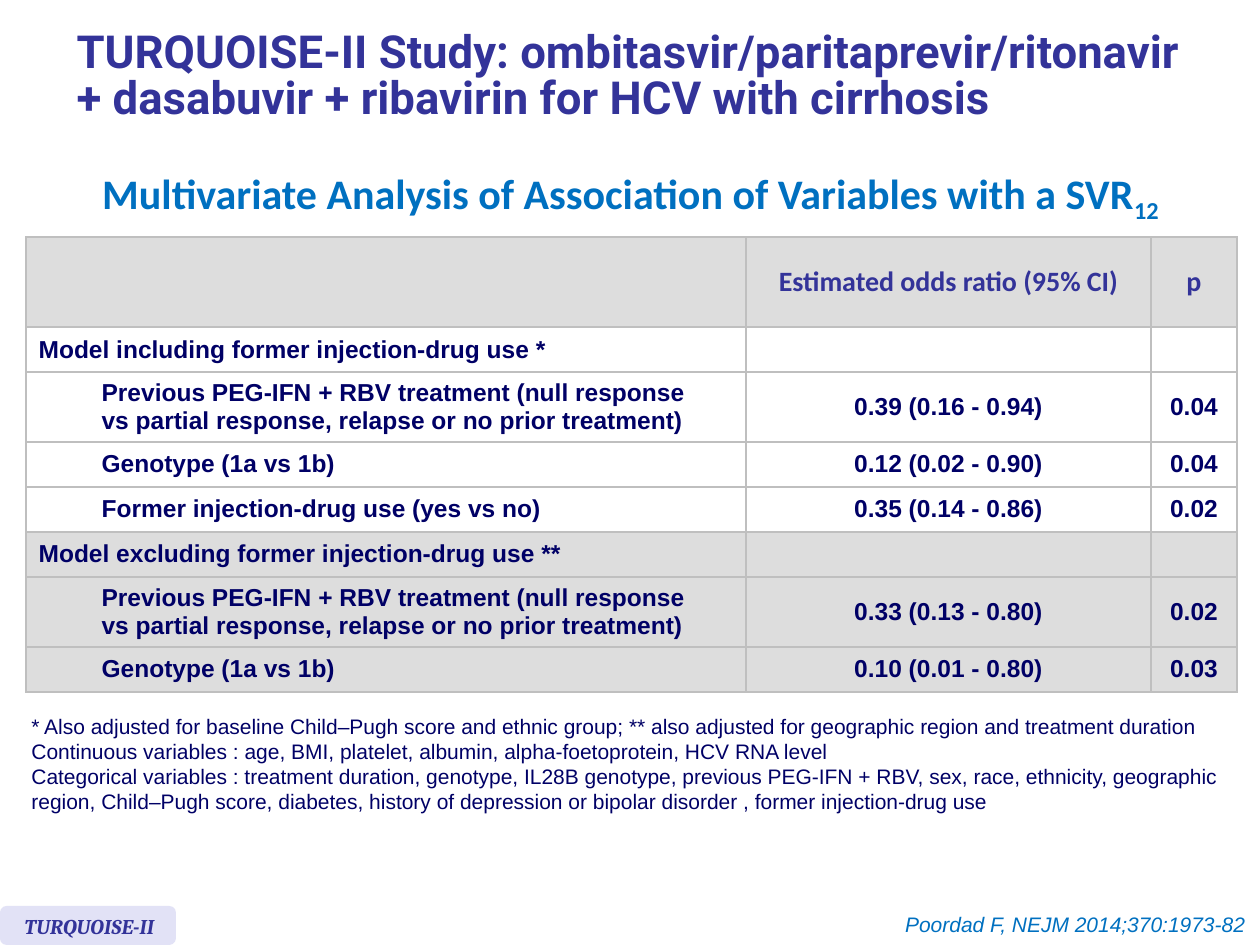
from lxml import etree
from pptx import Presentation
from pptx.dml.color import RGBColor
from pptx.enum.shapes import MSO_SHAPE
from pptx.enum.text import MSO_ANCHOR, PP_ALIGN
from pptx.oxml.ns import qn
from pptx.util import Emu, Pt

LEFT, MID, RIGHT = PP_ALIGN.LEFT, PP_ALIGN.CENTER, PP_ALIGN.RIGHT
MIDDLE = MSO_ANCHOR.MIDDLE
ROUND = MSO_SHAPE.ROUNDED_RECTANGLE
SCALE = 914400 / 126

THEME = {
    "white": "FFFFFF", "grey": "DDDDDD", "rule": "BFBFBF", "tag": "E2E2F6",
    # font, size, colour, bold, italic
    "title": ("Roboto", 26, "333399", True, False),
    "sub": ("Calibri", 24, "0070C0", True, False),
    "head": ("Calibri", 16, "333399", True, False),
    "cell": ("Arial", 14, "000066", True, False),
    "note": ("Arial", 12, "000066", False, False),
    "label": ("Cambria", 12, "333399", True, True),
    "cite": ("Arial", 12, "0070C0", False, True),
}

TITLE = ("TURQUOISE-II Study: ombitasvir/paritaprevir/ritonavir\v"
         "+ dasabuvir + ribavirin for HCV with cirrhosis")
SUB = "Multivariate Analysis of Association of Variables with a SVR"
TREAT = ("Previous PEG-IFN + RBV treatment (null response\v"
         "vs partial response, relapse or no prior treatment)")
GENO = "Genotype (1a vs 1b)"
HEAD = ("", "Estimated odds ratio (95% CI)", "p")
MODELS = [
    ("Model including former injection-drug use *", "white", [
        (TREAT, "0.39 (0.16 - 0.94)", "0.04"),
        (GENO, "0.12 (0.02 - 0.90)", "0.04"),
        ("Former injection-drug use (yes vs no)", "0.35 (0.14 - 0.86)", "0.02"),
    ]),
    ("Model excluding former injection-drug use **", "grey", [
        (TREAT, "0.33 (0.13 - 0.80)", "0.02"),
        (GENO, "0.10 (0.01 - 0.80)", "0.03"),
    ]),
]
NOTES = [
    "* Also adjusted for baseline Child–Pugh score and ethnic group; "
    "** also adjusted for geographic region and treatment duration",
    "Continuous variables : age, BMI, platelet, albumin, alpha-foetoprotein, "
    "HCV RNA level",
    "Categorical variables : treatment duration, genotype, IL28B genotype, "
    "previous PEG-IFN + RBV, sex, race, ethnicity, geographic region, "
    "Child–Pugh score, diabetes, history of depression or bipolar disorder , "
    "former injection-drug use",
]
COLS = (720, 405, 86)
HEAD_H, ROW_H, TALL_H = 90, 45, 70
INDENT = 63


def px(n):
    return Emu(round(n * SCALE))


def style(frame, kind, align=LEFT):
    name, size, color, bold, italic = THEME[kind]
    for para in frame.paragraphs:
        para.alignment = align
        for run in para.runs:
            font = run.font
            font.name, font.size = name, Pt(size)
            font.bold, font.italic = bold, italic
            font.color.rgb = RGBColor.from_string(color)


def add_text(shapes, box, text, kind, align=LEFT):
    frame = shapes.add_textbox(*map(px, box)).text_frame
    frame.word_wrap = True
    frame.text = text
    style(frame, kind, align)
    return frame


def paint(shape, color):
    shape.fill.solid()
    shape.fill.fore_color.rgb = RGBColor.from_string(THEME[color])


def add_rules(cell):
    """Draw a thin line on all four sides of a cell."""
    props = cell._tc.get_or_add_tcPr()
    for spot, side in enumerate(("a:lnL", "a:lnR", "a:lnT", "a:lnB")):
        line = etree.Element(qn(side), w=str(Pt(1)))
        fill = etree.SubElement(line, qn("a:solidFill"))
        etree.SubElement(fill, qn("a:srgbClr"), val=THEME["rule"])
        props.insert(spot, line)


def add_grid(shapes):
    # texts, fill, text kind, height, level
    rows = [(HEAD, "grey", "head", HEAD_H, 0)]
    for name, fill, items in MODELS:
        rows.append(((name, "", ""), fill, "cell", ROW_H, 0))
        for item in items:
            high = TALL_H if "\v" in item[0] else ROW_H
            rows.append((item, fill, "cell", high, 1))
    total = sum(row[3] for row in rows)
    box = (26, 237, sum(COLS), total)
    grid = shapes.add_table(len(rows), len(COLS), *map(px, box)).table
    grid.first_row = grid.horz_banding = False
    for col, wide in zip(grid.columns, COLS):
        col.width = px(wide)
    for r, (texts, fill, kind, high, level) in enumerate(rows):
        grid.rows[r].height = px(high)
        for c, text in enumerate(texts):
            cell = grid.cell(r, c)
            cell.margin_top = cell.margin_bottom = 0
            cell.vertical_anchor = MIDDLE
            cell.text_frame.text = text
            style(cell.text_frame, kind, MID if c else LEFT)
            if level and c == 0:
                para = cell.text_frame.paragraphs[0]
                para.level = level
                props = para._p.get_or_add_pPr()
                props.set("marL", str(px(INDENT)))
                props.set("indent", "0")
            paint(cell, fill)
            add_rules(cell)


def add_tag(shapes):
    group = shapes.add_group_shape().shapes
    tag = group.add_shape(ROUND, *map(px, (0, 906, 176, 39)))
    tag.adjustments[0] = 0.17
    tag.shadow.inherit = False
    paint(tag, "tag")
    tag.line.fill.background()
    add_text(group, (12, 907, 192, 38), "TURQUOISE-II", "label")


def main():
    deck = Presentation()
    deck.slide_width, deck.slide_height = px(1260), px(945)
    slide = deck.slides.add_slide(deck.slide_layouts[5])
    shapes = slide.shapes

    title = shapes.title
    title.left, title.top, title.width, title.height = map(px, (64, 10, 1196, 135))
    frame = title.text_frame
    frame.text = TITLE
    frame.vertical_anchor = MIDDLE
    frame.paragraphs[0].line_spacing = 0.85
    style(frame, "title")

    add_grid(shapes)
    add_text(shapes, (19, 707, 1230, 115), "\n".join(NOTES), "note")

    frame = add_text(shapes, (35, 161, 1191, 63), SUB, "sub", MID)
    low = frame.paragraphs[0].add_run()
    low.text = "12"
    style(frame, "sub", MID)
    low._r.get_or_add_rPr().set("baseline", "-25000")

    add_tag(shapes)
    add_text(shapes, (690, 905, 568, 38), "Poordad F, NEJM 2014;370:1973-82",
             "cite", RIGHT)
    deck.save("out.pptx")


if __name__ == "__main__":
    main()
